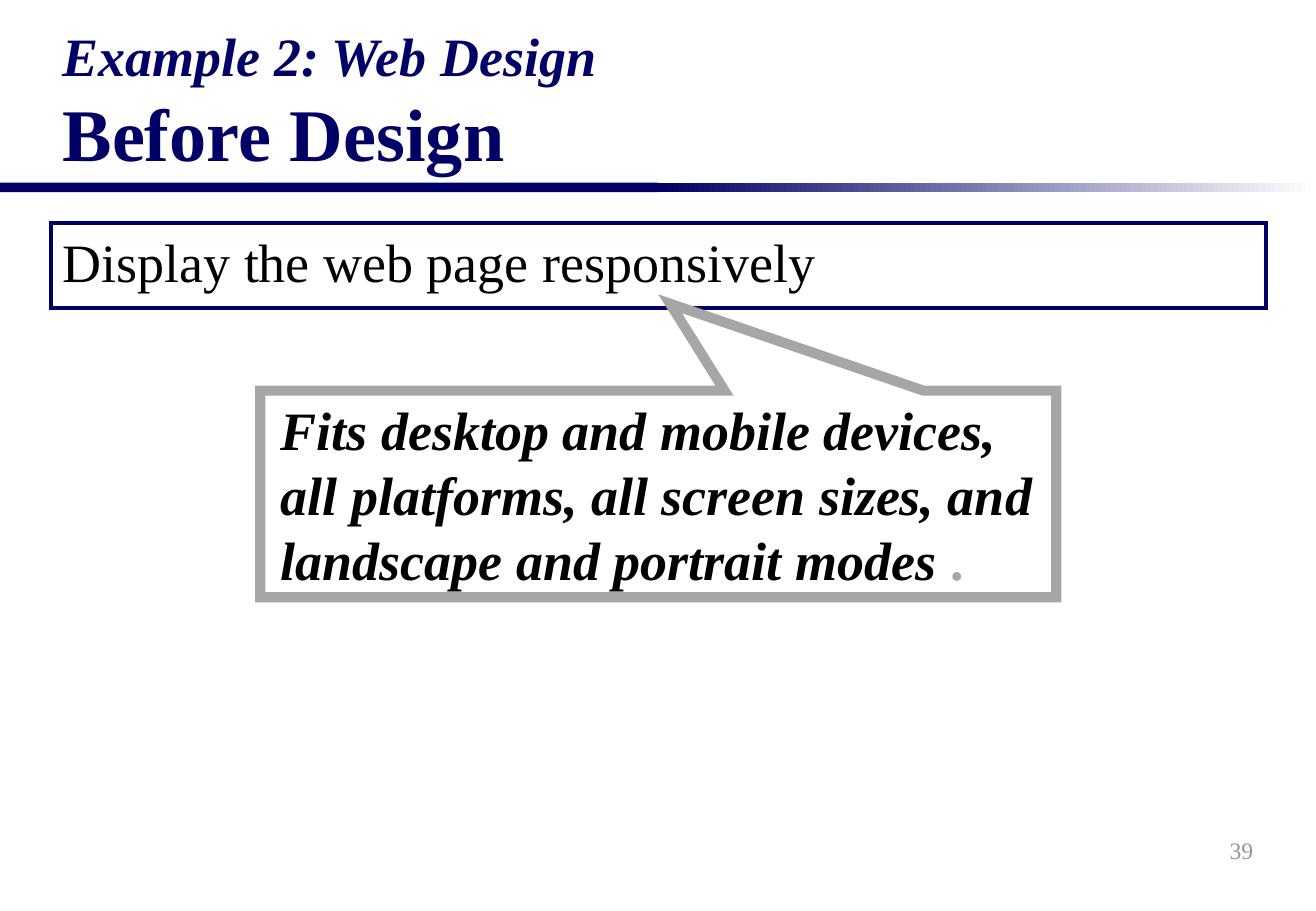
from lxml.etree import SubElement
from pptx import Presentation
from pptx.dml.color import RGBColor
from pptx.enum.shapes import MSO_SHAPE
from pptx.enum.text import MSO_ANCHOR, PP_ALIGN
from pptx.oxml.ns import qn
from pptx.util import Cm, Pt

# Content
TITLE = ("Example 2: Web Design", "Before Design")
GOAL = "Display the web page responsively"
MEANING = ("Fits desktop and mobile devices, all platforms, "
           "all screen sizes, and landscape and portrait modes ")
PAGE = "39"

NAVY, GRAY, BLACK, PAGE_GRAY = "000066", "A6A6A6", "000000", "969696"
WIDTH, HEIGHT = 27.51, 19.05
RULE_TOP, RULE_HEIGHT = 3.82, 0.2
LEFT, BODY_WIDTH = 1.06, 25.4


def rgb(color):
    return RGBColor.from_string(color)


def set_font(font, size, color, bold=False, italic=False):
    font.name, font.size = "Times New Roman", Pt(size)
    font.bold, font.italic = bold, italic
    font.color.rgb = rgb(color)


def add_box(kind, x, y, w, h, line=None, weight=0):
    sp = s.shapes.add_shape(kind, Cm(x), Cm(y), Cm(w), Cm(h))
    sp.shadow.inherit = False
    sp.fill.background()
    if line:
        sp.line.color.rgb = rgb(line)
        sp.line.width = Pt(weight)
        # Sharp corners
        ln = sp._element.spPr.find(qn("a:ln"))
        SubElement(ln, qn("a:miter"), lim="800000")
    else:
        sp.line.fill.background()
    return sp


def first_paragraph(sp, anchor, align=PP_ALIGN.LEFT):
    tf = sp.text_frame
    tf.word_wrap = True
    tf.vertical_anchor = anchor
    p = tf.paragraphs[0]
    p.alignment = align
    return p


def add_run(p, text):
    r = p.add_run()
    r.text = text
    return r


prs = Presentation()
prs.slide_width, prs.slide_height = Cm(WIDTH), Cm(HEIGHT)
s = prs.slides.add_slide(prs.slide_layouts[6])

# Rule under the title: solid half, then fading half
solid, fading = [add_box(MSO_SHAPE.RECTANGLE, i * WIDTH / 2, RULE_TOP,
                         WIDTH / 2, RULE_HEIGHT) for i in range(2)]
solid.fill.solid()
solid.fill.fore_color.rgb = rgb(NAVY)
fading.fill.gradient()
fading.fill.gradient_angle = 0
for stop, color in zip(fading.fill.gradient_stops, (NAVY, "FFFFFF")):
    stop.color.rgb = rgb(color)

# Title
sp = s.shapes.add_textbox(Cm(LEFT), Cm(0.74), Cm(BODY_WIDTH), Cm(3.07))
p = first_paragraph(sp, MSO_ANCHOR.BOTTOM)
set_font(add_run(p, TITLE[0]).font, 32, NAVY, bold=True, italic=True)
p.add_line_break()
set_font(add_run(p, TITLE[1]).font, 44, NAVY, bold=True)

# Page number
sp = s.shapes.add_textbox(Cm(20.73), Cm(17.15), Cm(5.72), Cm(1.27))
p = first_paragraph(sp, MSO_ANCHOR.MIDDLE, PP_ALIGN.RIGHT)
p.text = PAGE
set_font(p.font, 14, PAGE_GRAY)

# Design goal
sp = add_box(MSO_SHAPE.RECTANGLE, LEFT, 4.66, BODY_WIDTH, 1.78, NAVY, 2.25)
p = first_paragraph(sp, MSO_ANCHOR.TOP)
p.text = GOAL
set_font(p.font, 32, BLACK)

# Callout pointing at the goal
sp = add_box(MSO_SHAPE.RECTANGULAR_CALLOUT, 5.44, 8.17, 16.64, 4.32, GRAY, 6)
sp.adjustments[0], sp.adjustments[1] = 0.015, -0.921
p = first_paragraph(sp, MSO_ANCHOR.TOP)
sp.text_frame.margin_left = Cm(0.43)
set_font(add_run(p, MEANING).font, 32, BLACK, bold=True, italic=True)
set_font(add_run(p, ".").font, 32, GRAY, bold=True)

prs.save("out.pptx")
